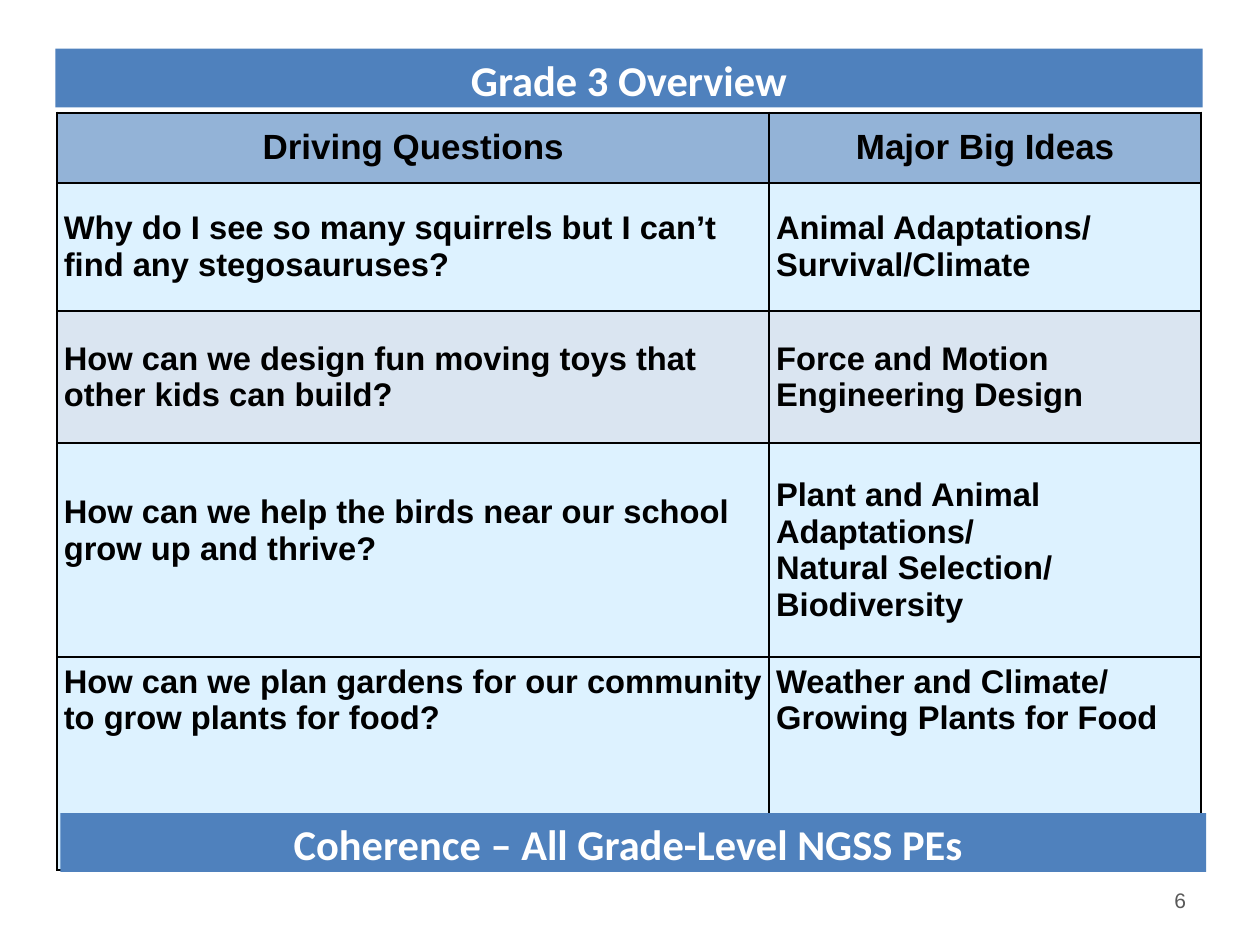
from lxml import etree
from pptx import Presentation
from pptx.dml.color import RGBColor
from pptx.enum.shapes import MSO_SHAPE
from pptx.enum.text import MSO_ANCHOR, PP_ALIGN
from pptx.oxml.ns import qn
from pptx.util import Inches, Pt

RECT = MSO_SHAPE.RECTANGLE
TOP, MIDDLE = MSO_ANCHOR.TOP, MSO_ANCHOR.MIDDLE
LEFT, CENTER, RIGHT = PP_ALIGN.LEFT, PP_ALIGN.CENTER, PP_ALIGN.RIGHT

COLORS = {"bar": "4F81BD", "header": "93B3D7", "light": "DDF2FF", "alt": "DAE5F1",
          "black": "000000", "white": "FFFFFF", "number": "595959"}

# Content: bars as (text, (left, top, width, height))
TITLE_BAR = ("Grade 3 Overview", (0.33, 0.29, 6.83, 0.35))
FOOT_BAR = ("Coherence – All Grade-Level NGSS PEs ", (0.36, 4.84, 6.82, 0.35))
PAGE_NUMBER = "6"

# Rows: height, fill, anchor, question, ideas
ROWS = [
    (0.42, "header", MIDDLE, "Driving Questions", ["Major Big Ideas"]),
    (0.76, "light", MIDDLE,
     "Why do I see so many squirrels but I can’t find any stegosauruses?",
     ["Animal Adaptations/", "Survival/Climate"]),
    (0.79, "alt", MIDDLE,
     "How can we design fun moving toys that other kids can build?",
     ["Force and Motion", "Engineering Design"]),
    (1.27, "light", MIDDLE,
     "How can we help the birds near our school grow up and thrive?",
     ["Plant and Animal Adaptations/", "Natural Selection/", "Biodiversity"]),
    (1.27, "light", TOP,
     "How can we plan gardens for our community to grow plants for food?",
     ["Weather and Climate/", "Growing Plants for Food"]),
]
COL_WIDTHS = [4.24, 2.57]
TABLE_POS = (0.34, 0.67)
CELL_MARGIN = 0.04
RAISED_ROW, RAISED_MARGIN = 3, 0.27  # this question sits above the row's middle


def rgb(name):
    return RGBColor.from_string(COLORS[name])


def write(tf, lines, size, font, color, align, bold=True):
    tf.word_wrap = True
    for i, line in enumerate(lines):
        p = tf.paragraphs[0] if i == 0 else tf.add_paragraph()
        p.add_run().text = line
        p.alignment = align
        p.font.size, p.font.name, p.font.bold = Pt(size), font, bold
        p.font.color.rgb = rgb(color)


def set_margins(box, x, y):
    box.margin_left = box.margin_right = Inches(x)
    box.margin_top = box.margin_bottom = Inches(y)


def add_borders(cell):
    tc_pr = cell._tc.get_or_add_tcPr()
    for i, side in enumerate(("a:lnL", "a:lnR", "a:lnT", "a:lnB")):
        ln = etree.Element(qn(side), w=str(Pt(1)))
        fill = etree.SubElement(ln, qn("a:solidFill"))
        etree.SubElement(fill, qn("a:srgbClr"), val=COLORS["black"])
        tc_pr.insert(i, ln)


def add_bar(s, text, box):
    sp = s.shapes.add_shape(RECT, *map(Inches, box))
    sp.shadow.inherit = False
    sp.fill.solid()
    sp.fill.fore_color.rgb = rgb("bar")
    sp.line.fill.background()
    set_margins(sp.text_frame, 0.06, 0.03)
    sp.text_frame.vertical_anchor = TOP
    write(sp.text_frame, [text], 18.2, "Calibri", "white", CENTER)


def add_overview_table(s):
    size = (sum(COL_WIDTHS), sum(row[0] for row in ROWS))
    table = s.shapes.add_table(len(ROWS), len(COL_WIDTHS),
                               *map(Inches, TABLE_POS + size)).table
    for col, width in zip(table.columns, COL_WIDTHS):
        col.width = Inches(width)
    for r, (height, fill, anchor, question, ideas) in enumerate(ROWS):
        table.rows[r].height = Inches(height)
        text_size, align = (15, CENTER) if r == 0 else (14, LEFT)
        for c, lines in enumerate(([question], ideas)):
            cell = table.cell(r, c)
            cell.fill.solid()
            cell.fill.fore_color.rgb = rgb(fill)
            cell.vertical_anchor = anchor
            set_margins(cell, CELL_MARGIN, CELL_MARGIN)
            write(cell.text_frame, lines, text_size, "Arial", "black", align)
            add_borders(cell)
    table.cell(RAISED_ROW, 0).margin_bottom = Inches(RAISED_MARGIN)


def main():
    prs = Presentation()
    prs.slide_width = Inches(7.5)
    prs.slide_height = prs.slide_width * 3 // 4  # 4:3 page
    s = prs.slides.add_slide(prs.slide_layouts[6])

    # Title bar, table, then the bar across the table's foot
    add_bar(s, *TITLE_BAR)
    add_overview_table(s)
    add_bar(s, *FOOT_BAR)

    # Page number
    tf = s.shapes.add_textbox(*map(Inches, (5.38, 5.21, 1.75, 0.3))).text_frame
    set_margins(tf, 0.07, 0.04)
    tf.vertical_anchor = MIDDLE
    write(tf, [PAGE_NUMBER], 9, "Arial", "number", RIGHT, bold=False)

    prs.save("out.pptx")


if __name__ == "__main__":
    main()
